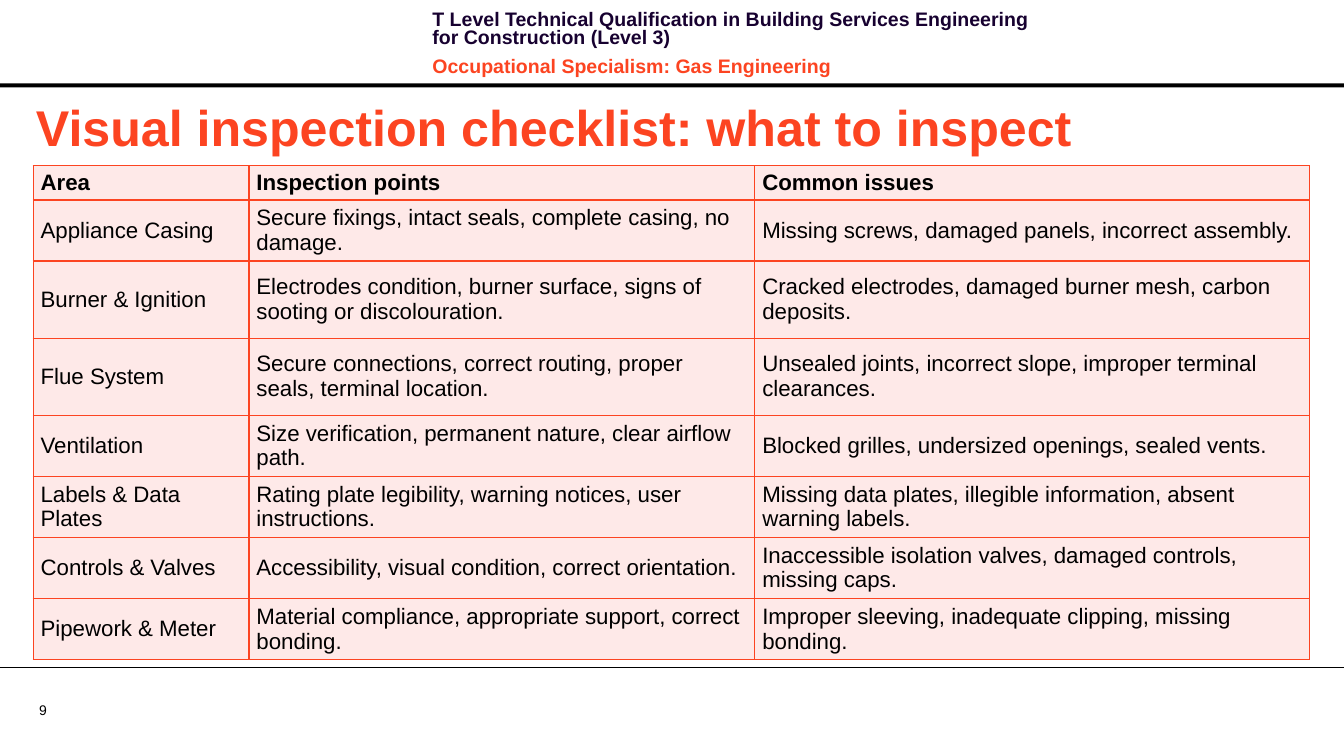
from typing import NamedTuple

from lxml import etree
from pptx import Presentation
from pptx.dml.color import RGBColor
from pptx.enum.shapes import MSO_CONNECTOR, MSO_SHAPE
from pptx.enum.text import MSO_ANCHOR
from pptx.oxml.ns import qn
from pptx.util import Pt

STRAIGHT = MSO_CONNECTOR.STRAIGHT
RECTANGLE = MSO_SHAPE.RECTANGLE
TOP, MIDDLE = MSO_ANCHOR.TOP, MSO_ANCHOR.MIDDLE

COLORS = {"orange": "FC4421", "navy": "170130", "black": "000000", "blush": "FEE9E8"}
FONT = "Arial"
SLIDE_W, SLIDE_H = 964.08, 538.56
COLUMN_WIDTHS = (154.8, 362.88, 398.16)


class Line(NamedTuple):
    text: str
    size: float
    color: str
    bold: bool = False
    spacing: float = 0
    before: float = 0


class Box(NamedTuple):
    left: float
    top: float
    width: float
    height: float
    lines: tuple[Line, ...]
    anchor: MSO_ANCHOR = MIDDLE
    inset_x: float = 7.2
    inset_y: float = 3.6


class CheckRow(NamedTuple):
    height: float
    area: str
    points: str
    issues: str


BOXES = (
    Box(303.12, 5.04, 458.64, 46.08, (
        Line("T Level Technical Qualification in Building Services Engineering "
             "for Construction (Level 3)", 14, "navy", True, 13.1),
        Line("Occupational Specialism: Gas Engineering", 14, "orange", True, 13.1, 8),
    ), TOP),
    Box(18.72, 64.8, 915.84, 51.12,
        (Line("Visual inspection checklist: what to inspect", 36, "orange", True),)),
    Box(28.08, 503.28, 46.08, 12.24, (Line("9", 10, "black"),), MIDDLE, 0, 0),
)

CHECKLIST = (
    CheckRow(23, "Area", "Inspection points", "Common issues"),
    CheckRow(41, "Appliance Casing",
             "Secure fixings, intact seals, complete casing, no damage.",
             "Missing screws, damaged panels, incorrect assembly."),
    CheckRow(55.3, "Burner & Ignition",
             "Electrodes condition, burner surface, signs of sooting or discolouration.",
             "Cracked electrodes, damaged burner mesh, carbon deposits."),
    CheckRow(55.3, "Flue System",
             "Secure connections, correct routing, proper seals, terminal location.",
             "Unsealed joints, incorrect slope, improper terminal clearances."),
    CheckRow(41, "Ventilation",
             "Size verification, permanent nature, clear airflow path.",
             "Blocked grilles, undersized openings, sealed vents."),
    CheckRow(41, "Labels & Data Plates",
             "Rating plate legibility, warning notices, user instructions.",
             "Missing data plates, illegible information, absent warning labels."),
    CheckRow(41, "Controls & Valves",
             "Accessibility, visual condition, correct orientation.",
             "Inaccessible isolation valves, damaged controls, missing caps."),
    CheckRow(41, "Pipework & Meter",
             "Material compliance, appropriate support, correct bonding.",
             "Improper sleeving, inadequate clipping, missing bonding."),
)


def rgb(name: str) -> RGBColor:
    return RGBColor.from_string(COLORS[name])


def write(p, text: str, *, size: float, color: str, bold: bool = False,
          spacing: float = 0, before: float = 0) -> None:
    if spacing:
        p.line_spacing = Pt(spacing)
    p.space_before = Pt(before)
    r = p.add_run()
    r.text = text
    r.font.name = FONT
    r.font.size = Pt(size)
    r.font.bold = bold
    r.font.color.rgb = rgb(color)


def set_insets(target, x: float, y: float) -> None:
    target.margin_left = target.margin_right = Pt(x)
    target.margin_top = target.margin_bottom = Pt(y)


def add_box(s, box: Box) -> None:
    sp = s.shapes.add_textbox(Pt(box.left), Pt(box.top), Pt(box.width), Pt(box.height))
    tf = sp.text_frame
    tf.word_wrap = True
    tf.vertical_anchor = box.anchor
    set_insets(tf, box.inset_x, box.inset_y)
    for i, line in enumerate(box.lines):
        p = tf.add_paragraph() if i else tf.paragraphs[0]
        write(p, **line._asdict())


def add_rules(s) -> None:
    """Draw the thick header bar and the thin footer line."""
    bar = s.shapes.add_shape(RECTANGLE, 0, Pt(59.76), Pt(SLIDE_W), Pt(2.88))
    bar.shadow.inherit = False
    bar.fill.solid()
    bar.fill.fore_color.rgb = rgb("black")
    bar.line.fill.background()

    footer = s.shapes.add_connector(STRAIGHT, 0, Pt(478.8), Pt(SLIDE_W), Pt(478.8))
    footer.line.color.rgb = rgb("black")
    footer.line.width = Pt(0.75)
    etree.SubElement(footer._element.spPr, qn("a:effectLst"))


def add_borders(cell, color: str, width: float) -> None:
    tc_pr = cell._tc.get_or_add_tcPr()
    for side in ("a:lnL", "a:lnR", "a:lnT", "a:lnB"):
        ln = etree.SubElement(tc_pr, qn(side), w=str(Pt(width)))
        fill = etree.SubElement(ln, qn("a:solidFill"))
        etree.SubElement(fill, qn("a:srgbClr"), val=COLORS[color])


def add_checklist(s) -> None:
    height = sum(row.height for row in CHECKLIST)
    table = s.shapes.add_table(len(CHECKLIST), len(COLUMN_WIDTHS), Pt(23.76), Pt(118.8),
                               Pt(sum(COLUMN_WIDTHS)), Pt(height)).table
    table.first_row = table.horz_banding = False
    for column, width in zip(table.columns, COLUMN_WIDTHS):
        column.width = Pt(width)
    for i, row in enumerate(CHECKLIST):
        table.rows[i].height = Pt(row.height)
        for cell, text in zip(table.rows[i].cells, (row.area, row.points, row.issues)):
            add_borders(cell, "orange", 1)
            cell.fill.solid()
            cell.fill.fore_color.rgb = rgb("blush")
            cell.vertical_anchor = MIDDLE
            set_insets(cell, 5.4, 2.7)
            write(cell.text_frame.paragraphs[0], text, size=16, color="black", bold=i == 0)


def main() -> None:
    prs = Presentation()
    prs.slide_width, prs.slide_height = Pt(SLIDE_W), Pt(SLIDE_H)
    s = prs.slides.add_slide(prs.slide_layouts[6])
    add_rules(s)
    for box in BOXES:
        add_box(s, box)
    add_checklist(s)
    prs.save("out.pptx")


if __name__ == "__main__":
    main()
